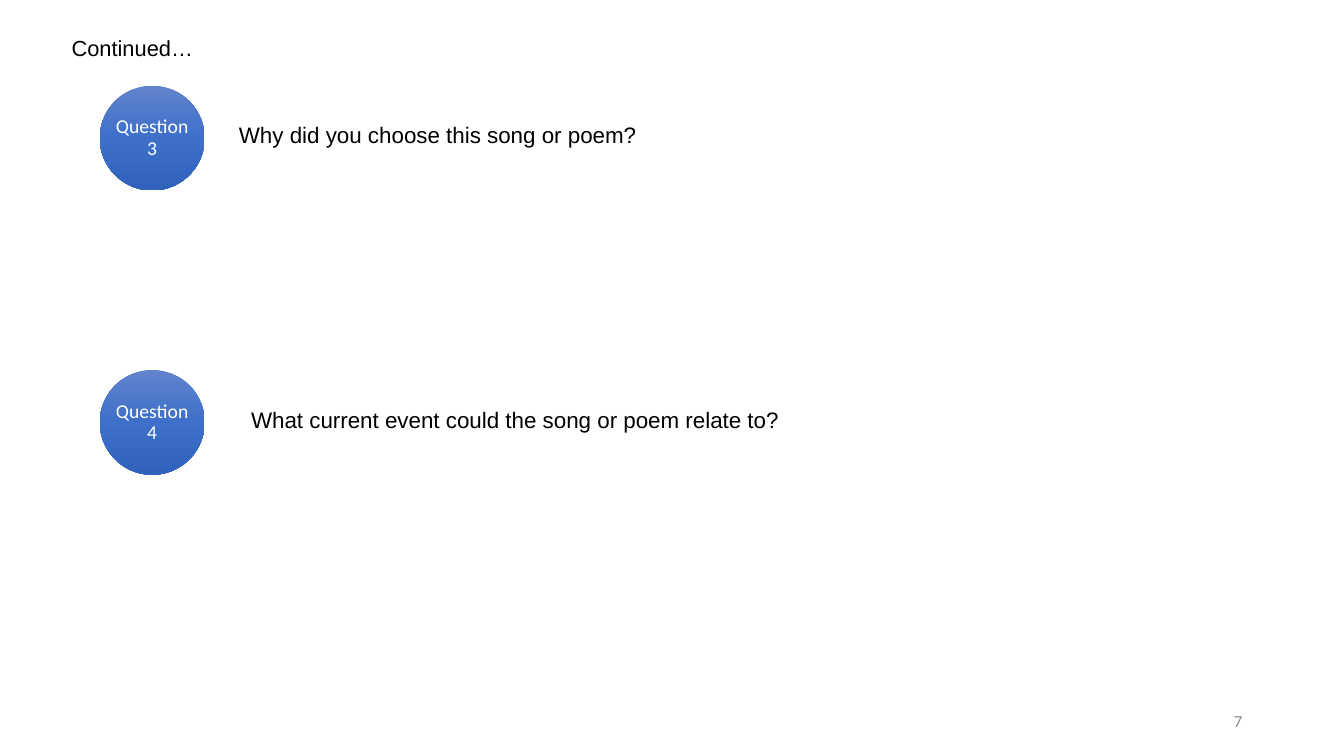
from copy import deepcopy

from pptx import Presentation
from pptx.dml.color import RGBColor
from pptx.enum.shapes import MSO_SHAPE
from pptx.enum.text import MSO_ANCHOR, MSO_AUTO_SIZE, PP_ALIGN
from pptx.util import Inches, Pt

OVAL = MSO_SHAPE.OVAL
TOP, MIDDLE = MSO_ANCHOR.TOP, MSO_ANCHOR.MIDDLE
LEFT, CENTER, RIGHT = PP_ALIGN.LEFT, PP_ALIGN.CENTER, PP_ALIGN.RIGHT
NO_FIT = MSO_AUTO_SIZE.NONE

BLACK = RGBColor(0x00, 0x00, 0x00)
WHITE = RGBColor(0xFF, 0xFF, 0xFF)
GRAY = RGBColor(0x8C, 0x8C, 0x8C)
BLUES = (RGBColor(0x61, 0x83, 0xCB), RGBColor(0x3E, 0x70, 0xCA),
         RGBColor(0x30, 0x62, 0xBB))

BADGE = 1.04  # circle diameter
# Top of the row, label, question, and its box relative to the row
ROWS = (
    (0.85, "Question 3", "Why did you choose this song or poem?",
     (1.38, 0.3, 9.97, 0.58)),
    (3.67, "Question 4", "What current event could the song or poem relate to?",
     (1.5, 0.31, 9.7, 1.15)),
)


def style(item, values):
    for name, value in values.items():
        setattr(item, name, value)


def write(shape, text, size, face, color, align=LEFT, anchor=TOP,
          space=0.9, pads=(0.1, 0.05, 0.1, 0.05)):
    frame = shape.text_frame
    frame.text = text
    sides = ("margin_left", "margin_top", "margin_right", "margin_bottom")
    style(frame, {"word_wrap": True, "auto_size": NO_FIT,
                  "vertical_anchor": anchor})
    style(frame, {side: Inches(pad) for side, pad in zip(sides, pads)})
    para = frame.paragraphs[0]
    style(para, {"alignment": align, "line_spacing": space})
    font = para.runs[0].font
    style(font, {"size": Pt(size), "name": face})
    font.color.rgb = color


def add_text(slide, box, text, *args, **kwargs):
    shape = slide.shapes.add_textbox(*map(Inches, box))
    write(shape, text, *args, **kwargs)


def add_title(slide, box, text):
    title = slide.shapes.title
    sides = ("left", "top", "width", "height")
    style(title, dict(zip(sides, map(Inches, box))))
    write(title, text, 15.6, "Arial", BLACK)


def shade(shape):
    fill = shape.fill
    fill.gradient()
    fill.gradient_angle = 270
    # Add a middle stop to the two default ones
    first = shape._element.spPr.gradFill.gsLst[0]
    first.addnext(deepcopy(first))
    for i, (stop, color) in enumerate(zip(fill.gradient_stops, BLUES)):
        stop.position = i / 2
        stop.color.rgb = color


def add_badge(slide, left, top, label):
    badge = slide.shapes.add_shape(
        OVAL, *map(Inches, (left, top, BADGE, BADGE)))
    badge.shadow.inherit = False
    badge.line.fill.background()
    shade(badge)
    write(badge, label, 14, "Calibri", WHITE, CENTER, MIDDLE,
          pads=(0, 0, 0, 0))


def add_row(slide, left, top, label, text, box):
    add_badge(slide, left, top, label)
    dx, dy, width, height = box
    add_text(slide, (left + dx, top + dy, width, height), text,
             16, "Arial", BLACK, pads=(0, 0.08, 0.08, 0.08))


def main():
    deck = Presentation()
    deck.slide_width, deck.slide_height = Inches(13.33), Inches(7.5)
    slide = deck.slides.add_slide(deck.slide_layouts[5])

    add_title(slide, (0.61, 0.32, 2.9, 0.37), "Continued…")
    for row in ROWS:
        add_row(slide, 0.99, *row)
    # Page number
    add_text(slide, (9.42, 6.95, 3, 0.4), "7", 12, "Calibri", GRAY,
             RIGHT, MIDDLE, space=1.0)

    deck.save("out.pptx")


if __name__ == "__main__":
    main()
